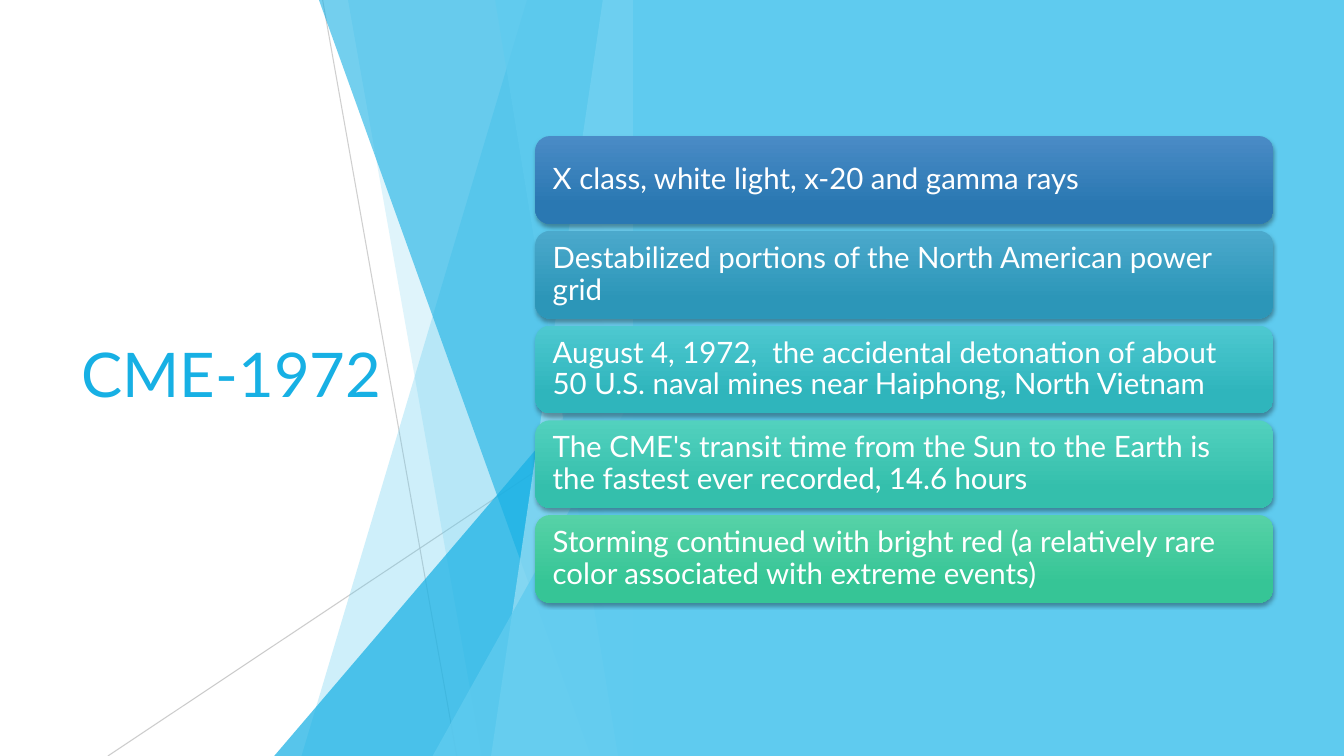
from dataclasses import dataclass
from typing import Any

from lxml.etree import SubElement as Sub
from pptx import Presentation
from pptx.dml.color import RGBColor as Rgb
from pptx.enum.shapes import MSO_CONNECTOR as Link, MSO_SHAPE as Kind
from pptx.enum.text import MSO_ANCHOR as Anchor, PP_ALIGN as Align
from pptx.oxml.ns import qn
from pptx.util import Inches, Pt

EDGE = 6.28
TOP = -0.01
BASE = 7.5
WIDE = 13.33
SKY = "5FCBEF"
BLUE = "17B0E4"


@dataclass
class Ray:
    start: tuple[float, float]
    end: tuple[float, float]
    alpha: int


@dataclass
class Band:
    top: float
    foot: float
    tint: str
    alpha: int


@dataclass
class Peak:
    left: float
    top: float
    tint: str
    alpha: int


@dataclass
class Card:
    text: str
    light: str
    dark: str


RAYS = [
    Ray((3.2, 0), (4.53, BASE), 75),
    Ray((EDGE, 4.03), (1.07, BASE), 80),
]
FACETS = [
    Band(5.23, 2.99, SKY, 30),
    Band(3.45, 4.78, SKY, 20),
    Peak(2.72, 3.33, BLUE, 72),
    Band(3.16, 5.86, BLUE, 60),
    Band(5.98, 4.87, "9FE0F5", 70),
    Band(4.91, 6.13, SKY, 65),
    Peak(4.29, 3.93, SKY, 80),
]
CARDS = [
    Card("X class, white light, x-20 and gamma rays", "4A8BC6", "2A78B2"),
    Card("Destabilized portions of the North American power grid",
         "4BA9CC", "2C96B8"),
    Card("August 4, 1972,  the accidental detonation of about 50 U.S. naval "
         "mines near Haiphong, North Vietnam", "4DC8D0", "2FB5BC"),
    Card("The CME's transit time from the Sun to the Earth is the fastest "
         "ever recorded, 14.6 hours", "52D1BE", "34BFAC"),
    Card("Storming continued with bright red (a relatively rare color "
         "associated with extreme events)", "56D2A7", "36C596"),
]
FRAME = {"word_wrap": True, "vertical_anchor": Anchor.MIDDLE}
INSET = {"margin_left": Inches(0.13), "margin_right": Inches(0.13),
         "margin_top": Inches(0.13), "margin_bottom": Inches(0.13)}
PARA = {"alignment": Align.LEFT, "line_spacing": 0.9}


def color(code: str) -> Rgb:
    return Rgb.from_string(code)


def apply(item: Any, style: dict[str, Any]) -> None:
    for key, value in style.items():
        setattr(item, key, value)


def fade(part: Any, alpha: int) -> None:
    tone = next(part.iter(qn("a:srgbClr")))
    Sub(tone, qn("a:alpha"), val=str(alpha * 1000))


def paint(shape: Any, tint: str, alpha: int = 100) -> None:
    shape.shadow.inherit = False
    shape.line.fill.background()
    shape.fill.solid()
    shape.fill.fore_color.rgb = color(tint)
    if alpha < 100:
        fade(shape.element.spPr, alpha)


def write(shape: Any, text: str, size: int, tint: str,
          frame: dict[str, Any]) -> None:
    apply(shape.text_frame, frame)
    para = shape.text_frame.paragraphs[0]
    apply(para, PARA)
    run = para.add_run()
    run.text = text
    apply(run.font, {"name": "Lato", "size": Pt(size)})
    run.font.color.rgb = color(tint)


def add_ray(shapes: Any, ray: Ray) -> None:
    ends = [Inches(n) for n in (*ray.start, *ray.end)]
    line = shapes.add_connector(Link.STRAIGHT, *ends)
    line.line.width = Pt(0.75)
    line.line.color.rgb = color("BFBFBF")
    props = line.element.spPr
    fade(props, ray.alpha)
    Sub(props, qn("a:effectLst"))


def add_band(shapes: Any, band: Band) -> None:
    path = shapes.build_freeform(Inches(band.top), Inches(TOP))
    rest = [(EDGE, TOP), (EDGE, BASE), (band.foot, BASE)]
    path.add_line_segments([(Inches(x), Inches(y)) for x, y in rest])
    paint(path.convert_to_shape(), band.tint, band.alpha)


def add_peak(shapes: Any, peak: Peak) -> None:
    shape = shapes.add_shape(
        Kind.ISOSCELES_TRIANGLE, Inches(peak.left), Inches(peak.top),
        Inches(EDGE - peak.left), Inches(BASE - peak.top))
    shape.adjustments[0] = 1
    paint(shape, peak.tint, peak.alpha)


def add_card(shapes: Any, card: Card, top: float) -> None:
    shape = shapes.add_shape(Kind.ROUNDED_RECTANGLE, Inches(5.31),
                             Inches(top), Inches(7.32), Inches(0.87))
    shape.shadow.inherit = False
    shape.line.fill.background()
    shape.fill.gradient()
    shape.fill.gradient_angle = 270
    pairs = [(0, card.light), (0.78, card.dark)]
    for stop, (place, tint) in zip(shape.fill.gradient_stops, pairs):
        stop.position = place
        stop.color.rgb = color(tint)
    effect = shape.element.spPr.find(qn("a:effectLst"))
    shade = Sub(effect, qn("a:outerShdw"), blurRad=str(Pt(3)),
                dist=str(Pt(2)), dir="5400000", rotWithShape="0")
    Sub(shade, qn("a:srgbClr"), val="000000")
    fade(shade, 35)
    write(shape, card.text, 21, "FFFFFF", FRAME | INSET)


def main() -> None:
    deck = Presentation()
    apply(deck, {"slide_width": Inches(WIDE), "slide_height": Inches(BASE)})
    shapes = deck.slides.add_slide(deck.slide_layouts[6]).shapes
    for ray in RAYS:
        add_ray(shapes, ray)
    for facet in FACETS:
        if isinstance(facet, Band):
            add_band(shapes, facet)
        else:
            add_peak(shapes, facet)
    title = shapes.add_textbox(Inches(0.71), Inches(1.51),
                               Inches(3.88), Inches(4.48))
    write(title, "CME-1972", 44, BLUE, FRAME)
    panel = shapes.add_shape(Kind.RECTANGLE, Inches(EDGE), 0,
                             Inches(WIDE - EDGE), Inches(BASE))
    paint(panel, SKY)
    for row, card in enumerate(CARDS):
        add_card(shapes, card, 1.35 + 0.94 * row)
    deck.save("out.pptx")


if __name__ == "__main__":
    main()
